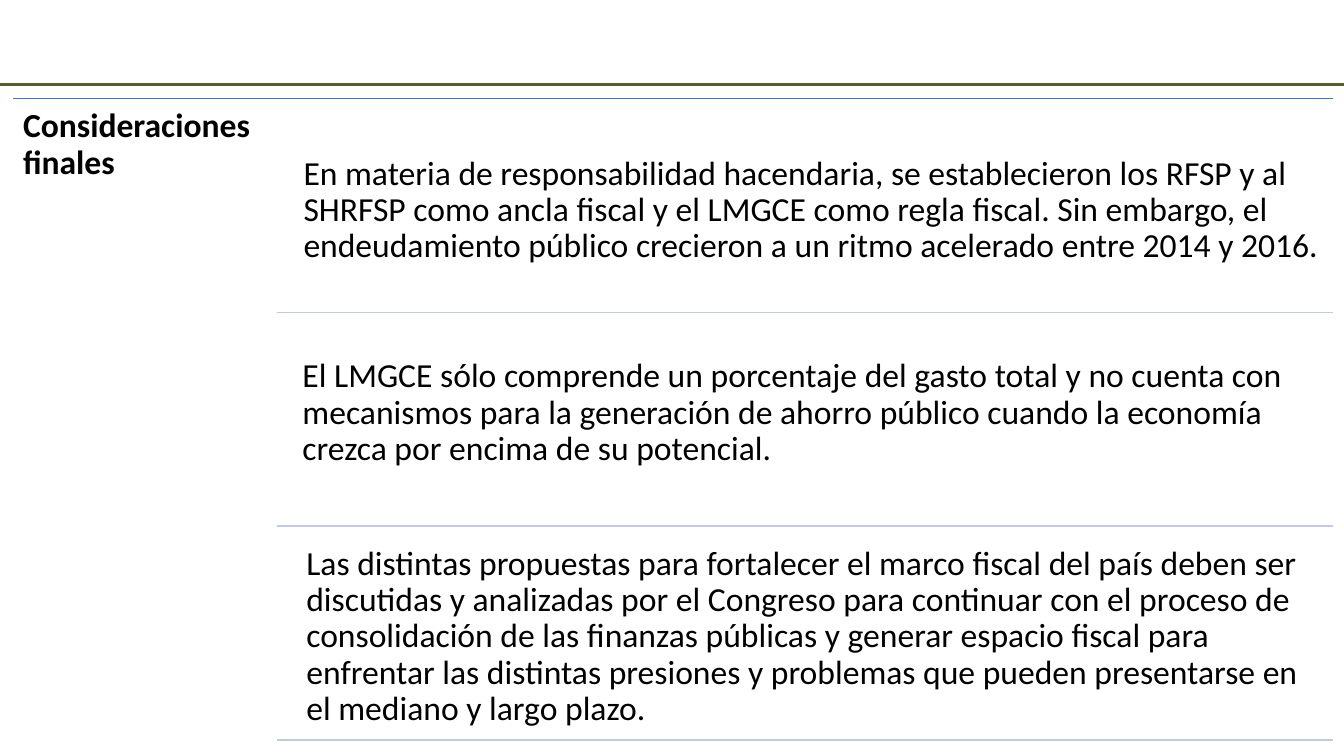
import pptx
import pptx.util
import pptx.dml.color
import pptx.enum.shapes
import pptx.oxml
from dataclasses import dataclass

Inches = pptx.util.Inches
Pt = pptx.util.Pt


@dataclass(frozen=True)
class Theme:
    font: str = "Calibri"
    size: int = 24
    text: str = "000000"
    header_rule: str = "4F6228"
    top_rule: str = "4472C4"
    divider: str = "C1C9E4"


theme = Theme()
rgb = pptx.dml.color.RGBColor.from_string

prs = pptx.Presentation()
prs.slide_width = Inches(13.33)
prs.slide_height = Inches(7.5)
s = prs.slides.add_slide(prs.slide_layouts[6])


def add_rule(left, right, y, color, width=1):
    line = s.shapes.add_connector(
        pptx.enum.shapes.MSO_CONNECTOR.STRAIGHT,
        Inches(left), Inches(y), Inches(right), Inches(y))
    line.line.color.rgb = rgb(color)
    line.line.width = Pt(width)
    line._element.spPr.append(pptx.oxml.parse_xml(
        '<a:effectLst xmlns:a="http://schemas.openxmlformats.org/drawingml/2006/main"/>'))


def add_text(text, left, top, width, height, inset, top_inset, bold=False):
    sp = s.shapes.add_textbox(Inches(left), Inches(top), Inches(width), Inches(height))
    tf = sp.text_frame
    tf.word_wrap = True
    tf.margin_left = tf.margin_right = tf.margin_bottom = Inches(inset)
    tf.margin_top = Inches(top_inset)
    p = tf.paragraphs[0]
    p.text = text
    p.line_spacing = 0.9
    p.font.name = theme.font
    p.font.size = Pt(theme.size)
    p.font.bold = bold
    p.font.color.rgb = rgb(theme.text)


right = 13.22
top = 0.98
row_height = 2.02
row_gap = 0.1

add_rule(0, 13.33, 0.84, theme.header_rule, 2)
add_rule(0.13, right, top, theme.top_rule)
add_text("Consideraciones finales", 0.13, top, 2.62, 6.47, 0.1, 0.1, bold=True)

# Each row: side inset, top inset, text
considerations = [
    (0.07, 0.47,
     "En materia de responsabilidad hacendaria, se establecieron los RFSP y al "
     "SHRFSP como ancla fiscal y el LMGCE como regla fiscal. Sin embargo, el "
     "endeudamiento público crecieron a un ritmo acelerado entre 2014 y 2016."),
    (0.06, 0.36,
     "El LMGCE sólo comprende un porcentaje del gasto total y no cuenta con "
     "mecanismos para la generación de ahorro público cuando la economía "
     "crezca por encima de su potencial."),
    (0.1, 0.1,
     "Las distintas propuestas para fortalecer el marco fiscal del país deben ser "
     "discutidas y analizadas por el Congreso para continuar con el proceso de "
     "consolidación de las finanzas públicas y generar espacio fiscal para "
     "enfrentar las distintas presiones y problemas que pueden presentarse en "
     "el mediano y largo plazo."),
]
for i, (inset, top_inset, text) in enumerate(considerations):
    row_top = top + row_gap + i * (row_height + row_gap)
    add_text(text, 2.94, row_top, 10.28, row_height, inset, top_inset)
    add_rule(2.75, right, row_top + row_height, theme.divider)

prs.save("out.pptx")
